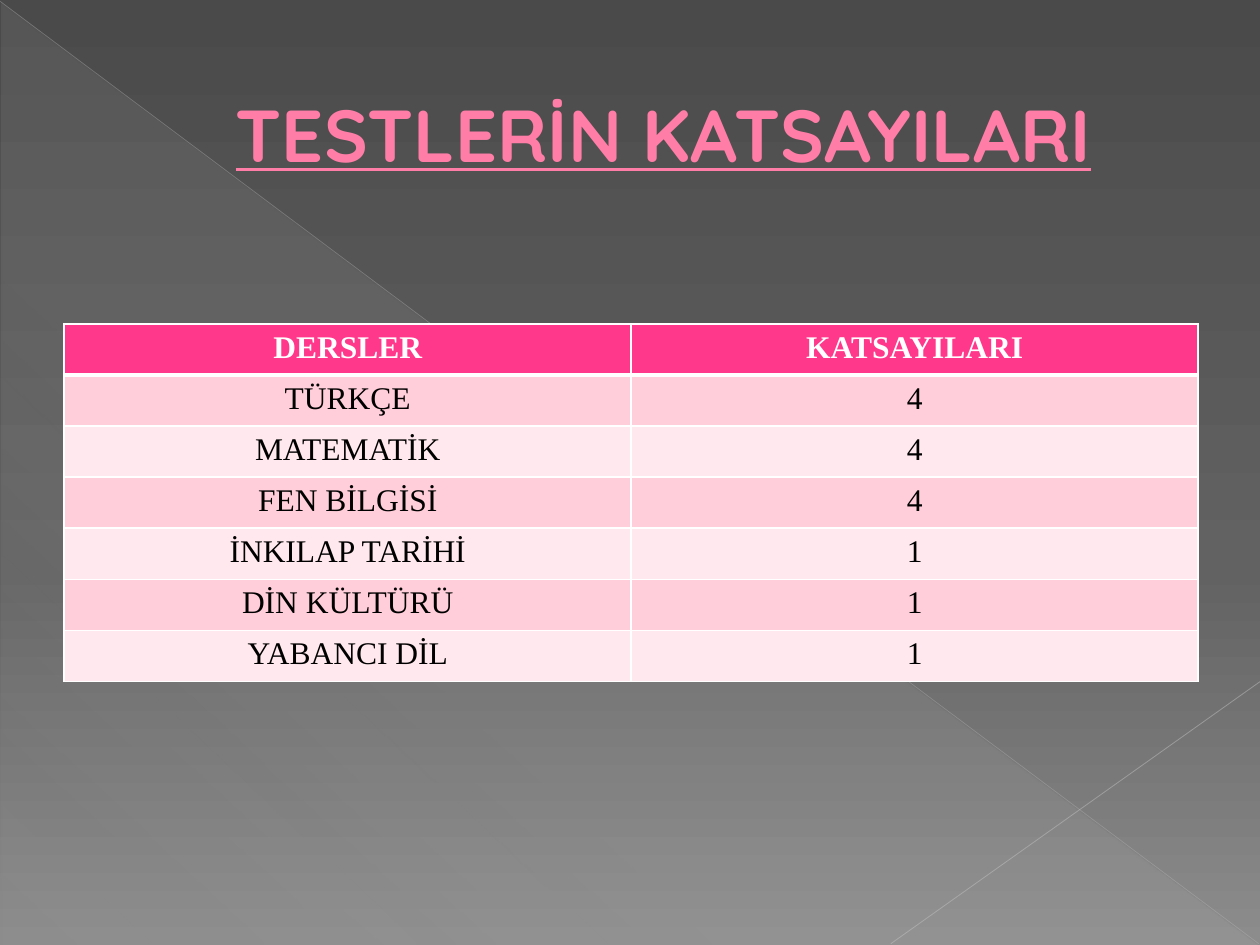
from lxml.etree import SubElement
from pptx import Presentation
from pptx.dml.color import RGBColor
from pptx.enum.shapes import MSO_CONNECTOR, MSO_SHAPE
from pptx.enum.text import MSO_ANCHOR, PP_ALIGN
from pptx.oxml.ns import qn
from pptx.util import Pt

PX = 9144  # 100 px to the inch
color = RGBColor.from_string


def set_gradient(element, stops, angle):
    grad = element.find(".//" + qn("a:gradFill"))
    gs_list = grad.find(qn("a:gsLst"))
    for gs in list(gs_list):
        gs_list.remove(gs)
    for pos, rgb, alpha in stops:
        gs = SubElement(gs_list, qn("a:gs"), pos=str(pos * 1000))
        clr = SubElement(gs, qn("a:srgbClr"), val=rgb)
        SubElement(clr, qn("a:alpha"), val=str(alpha * 1000))
    grad.find(qn("a:lin")).set("ang", str(angle * 60000))


def add_text(tf, text, size, font, rgb, bold=False, underline=False):
    p = tf.paragraphs[0]
    p.alignment = PP_ALIGN.CENTER
    r = p.add_run()
    r.text = text
    r.font.size = Pt(size)
    r.font.name = font
    r.font.bold = bold
    r.font.underline = underline
    r.font.color.rgb = color(rgb)
    return p, r


prs = Presentation()
prs.slide_width, prs.slide_height = 1000 * PX, 750 * PX
s = prs.slides.add_slide(prs.slide_layouts[6])

# Background
s.background.fill.gradient()
set_gradient(s.element, [(0, "4A4A4A", 100), (60, "626262", 100), (100, "8C8C8C", 100)], 90)

# Pale triangle
sp = s.shapes.add_shape(MSO_SHAPE.RIGHT_TRIANGLE, 1 * PX, 2 * PX, 998 * PX, 748 * PX)
sp.shadow.inherit = False
sp.line.fill.background()
sp.fill.gradient()
set_gradient(sp.element, [(0, "D2D2D2", 10), (70, "D2D2D2", 8), (100, "D2D2D2", 1)], 133)

# Crossing diagonals
for x1, y1, x2, y2, rgb, width, alpha in [
    (0, 1, 999, 749, "BFBFBF", 0.39, 35),
    (1000, 541, 707, 749, "C6C6C6", 0.47, 45),
]:
    line = s.shapes.add_connector(MSO_CONNECTOR.STRAIGHT, x1 * PX, y1 * PX, x2 * PX, y2 * PX)
    line.line.color.rgb = color(rgb)
    line.line.width = Pt(width)
    clr = line.element.spPr.find(".//" + qn("a:srgbClr"))
    SubElement(clr, qn("a:alpha"), val=str(alpha * 1000))
    SubElement(line.element.spPr, qn("a:effectLst"))

# Title
tf = s.shapes.add_textbox(50 * PX, 29 * PX, 900 * PX, 153 * PX).text_frame
tf.word_wrap = True
tf.vertical_anchor = MSO_ANCHOR.MIDDLE
p, r = add_text(tf, "TESTLERİN KATSAYILARI", 42, "Quicksand", "FF7DA7", bold=True, underline=True)
pPr = p._p.get_or_add_pPr()
pPr.set("marL", str(53 * PX))
pPr.set("indent", "0")
rPr = r.font._element
outline = SubElement(rPr, qn("a:ln"), w=str(Pt(0.5)))
SubElement(SubElement(outline, qn("a:solidFill")), qn("a:srgbClr"), val="B12761")
rPr.insert(0, outline)

# Table of coefficients
rows = [
    ("DERSLER", "KATSAYILARI"),
    ("TÜRKÇE", "4"),
    ("MATEMATİK", "4"),
    ("FEN BİLGİSİ", "4"),
    ("İNKILAP TARİHİ", "1"),
    ("DİN KÜLTÜRÜ", "1"),
    ("YABANCI DİL", "1"),
]
table = s.shapes.add_table(len(rows), 2, 51 * PX, 257 * PX, 900 * PX, 284 * PX).table
table.horz_banding = False
for i, row in enumerate(rows):
    header = i == 0
    fill = "FF388C" if header else ("FFE8EE", "FFCEDA")[i % 2]
    for j, text in enumerate(row):
        cell = table.cell(i, j)
        tcPr = cell._tc.get_or_add_tcPr()
        for side in "LRTB":
            heavy = (side == "B" and i == 0) or (side == "T" and i == 1)
            ln = SubElement(tcPr, qn("a:ln" + side), w=str(Pt(3 if heavy else 1)))
            SubElement(SubElement(ln, qn("a:solidFill")), qn("a:srgbClr"), val="FFFFFF")
        cell.fill.solid()
        cell.fill.fore_color.rgb = color(fill)
        add_text(cell.text_frame, text, 18, "Times New Roman",
                 "FFFFFF" if header else "000000", bold=header)

prs.save("out.pptx")
